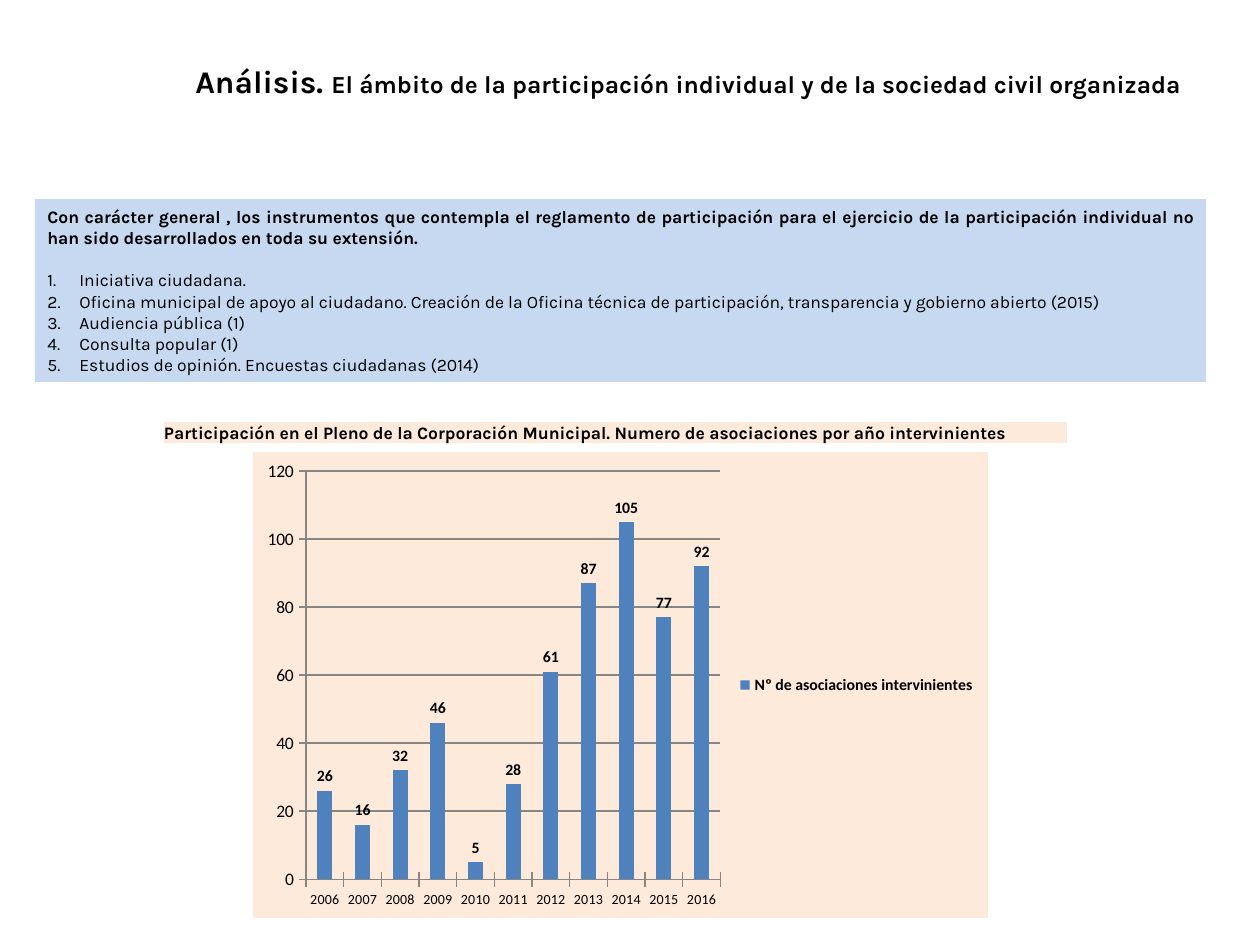
"""Build the slide on individual participation and associations in the municipal plenary."""
from dataclasses import dataclass

from lxml import etree
from pptx import Presentation
from pptx.chart.data import CategoryChartData
from pptx.dml.color import RGBColor
from pptx.enum.chart import XL_CHART_TYPE as ChartType
from pptx.enum.chart import XL_LABEL_POSITION as LabelPosition
from pptx.enum.chart import XL_LEGEND_POSITION as LegendPosition
from pptx.enum.chart import XL_TICK_MARK as TickMark
from pptx.enum.shapes import MSO_SHAPE as ShapeKind
from pptx.enum.text import MSO_ANCHOR as Anchor
from pptx.enum.text import PP_ALIGN as Align
from pptx.oxml import parse_xml
from pptx.oxml.ns import nsdecls, qn
from pptx.util import Pt

PX = 914400 / 126


@dataclass(frozen=True)
class Theme:
    text_font: str = "Karla"
    chart_font: str = "Calibri"
    ink: RGBColor = RGBColor.from_string("000000")
    panel: RGBColor = RGBColor.from_string("C6D9F1")
    cream: RGBColor = RGBColor.from_string("FDEADA")
    bar: RGBColor = RGBColor.from_string("4F81BD")
    axis: RGBColor = RGBColor.from_string("868686")
    title: int = 18
    subtitle: int = 14
    body: int = 10
    label: int = 9
    category: int = 8


def px(*lengths):
    return [round(length * PX) for length in lengths]


def style_font(font, size, bold=False, name=Theme.text_font):
    font.name = name
    font.size = Pt(size)
    font.bold = bold
    font.color.rgb = Theme.ink


presentation = Presentation()
presentation.slide_width, presentation.slide_height = px(1260, 945)
slide = presentation.slides.add_slide(presentation.slide_layouts[6])

title_box = slide.shapes.add_textbox(*px(44, 37, 1150, 71))
title_box.text_frame.word_wrap = True
paragraph = title_box.text_frame.paragraphs[0]
paragraph.alignment = Align.RIGHT
paragraph.line_spacing = 1.5
title_runs = [
    ("Análisis. ", Theme.title),
    ("El ámbito de la participación individual y de la sociedad civil organizada", Theme.subtitle),
]
for text, size in title_runs:
    run = paragraph.add_run()
    run.text = text
    style_font(run.font, size, bold=True)

panels = []
for bounds, color in [((35, 199, 1171, 183), Theme.panel), ((164, 422, 903, 21), Theme.cream)]:
    panel = slide.shapes.add_shape(ShapeKind.RECTANGLE, *px(*bounds))
    panel.shadow.inherit = False
    panel.fill.solid()
    panel.fill.fore_color.rgb = color
    panel.line.fill.background()
    panel.text_frame.word_wrap = True
    panels.append(panel)
instruments_panel, heading_panel = panels

instruments = [
    "Iniciativa ciudadana.",
    "Oficina municipal de apoyo al ciudadano. Creación de la Oficina técnica de "
    "participación, transparencia y gobierno abierto (2015)",
    "Audiencia pública (1)",
    "Consulta popular (1)",
    "Estudios de opinión. Encuestas ciudadanas (2014)",
]
frame = instruments_panel.text_frame
frame.vertical_anchor = Anchor.MIDDLE
paragraph = frame.paragraphs[0]
paragraph.text = (
    "Con carácter general , los instrumentos que contempla el reglamento de participación "
    "para el ejercicio de la participación individual no han sido desarrollados en toda su extensión."
)
paragraph.alignment = Align.JUSTIFY
paragraph.space_after = Pt(12)
style_font(paragraph.font, Theme.body, bold=True)
indent, = px(32)
for instrument in instruments:
    paragraph = frame.add_paragraph()
    paragraph.text = instrument
    paragraph.alignment = Align.JUSTIFY
    style_font(paragraph.font, Theme.body)
    properties = paragraph._p.get_or_add_pPr()
    properties.set("marL", str(indent))
    properties.set("indent", str(-indent))
    numbering = etree.Element(qn("a:buAutoNum"), type="arabicPeriod")
    properties.find(qn("a:defRPr")).addprevious(numbering)

frame = heading_panel.text_frame
frame.margin_left = frame.margin_right = frame.margin_top = frame.margin_bottom = 0
frame.vertical_anchor = Anchor.TOP
paragraph = frame.paragraphs[0]
paragraph.text = (
    "Participación en el Pleno de la Corporación Municipal. "
    "Numero de asociaciones por año intervinientes"
)
paragraph.alignment = Align.LEFT
paragraph.space_after = Pt(10)
style_font(paragraph.font, Theme.body, bold=True)

chart_data = CategoryChartData()
chart_data.categories = [str(year) for year in range(2006, 2017)]
chart_data.add_series(
    "Nº de asociaciones intervinientes", [26, 16, 32, 46, 5, 28, 61, 87, 105, 77, 92]
)
chart = slide.shapes.add_chart(
    ChartType.COLUMN_CLUSTERED, *px(253, 452, 735, 466), chart_data
).chart
chart.has_title = False
style_font(chart.font, Theme.body, name=Theme.chart_font)
chart_fill = parse_xml(
    f'<c:spPr {nsdecls("c", "a")}><a:solidFill><a:srgbClr val="{Theme.cream}"/></a:solidFill>'
    "<a:ln><a:noFill/></a:ln></c:spPr>"
)
chart._chartSpace.find(qn("c:txPr")).addprevious(chart_fill)

chart.has_legend = True
chart.legend.position = LegendPosition.RIGHT
chart.legend.include_in_layout = False
style_font(chart.legend.font, Theme.label, bold=True, name=Theme.chart_font)

value_axis, category_axis = chart.value_axis, chart.category_axis
value_axis.minimum_scale, value_axis.maximum_scale, value_axis.major_unit = 0, 120, 20
value_axis.has_major_gridlines = True
style_font(category_axis.tick_labels.font, Theme.category, name=Theme.chart_font)
for axis in (value_axis, category_axis):
    axis.major_tick_mark = TickMark.CROSS
    axis.minor_tick_mark = TickMark.NONE
for line_owner in (value_axis, category_axis, value_axis.major_gridlines):
    line_owner.format.line.color.rgb = Theme.axis
    line_owner.format.line.width = Pt(0.75)

plot = chart.plots[0]
plot.gap_width = 150
plot.vary_by_categories = False
series = plot.series[0]
series.format.fill.solid()
series.format.fill.fore_color.rgb = Theme.bar
labels = series.data_labels
labels.show_value = True
labels.position = LabelPosition.OUTSIDE_END
style_font(labels.font, Theme.label, bold=True, name=Theme.chart_font)

presentation.save("out.pptx")
